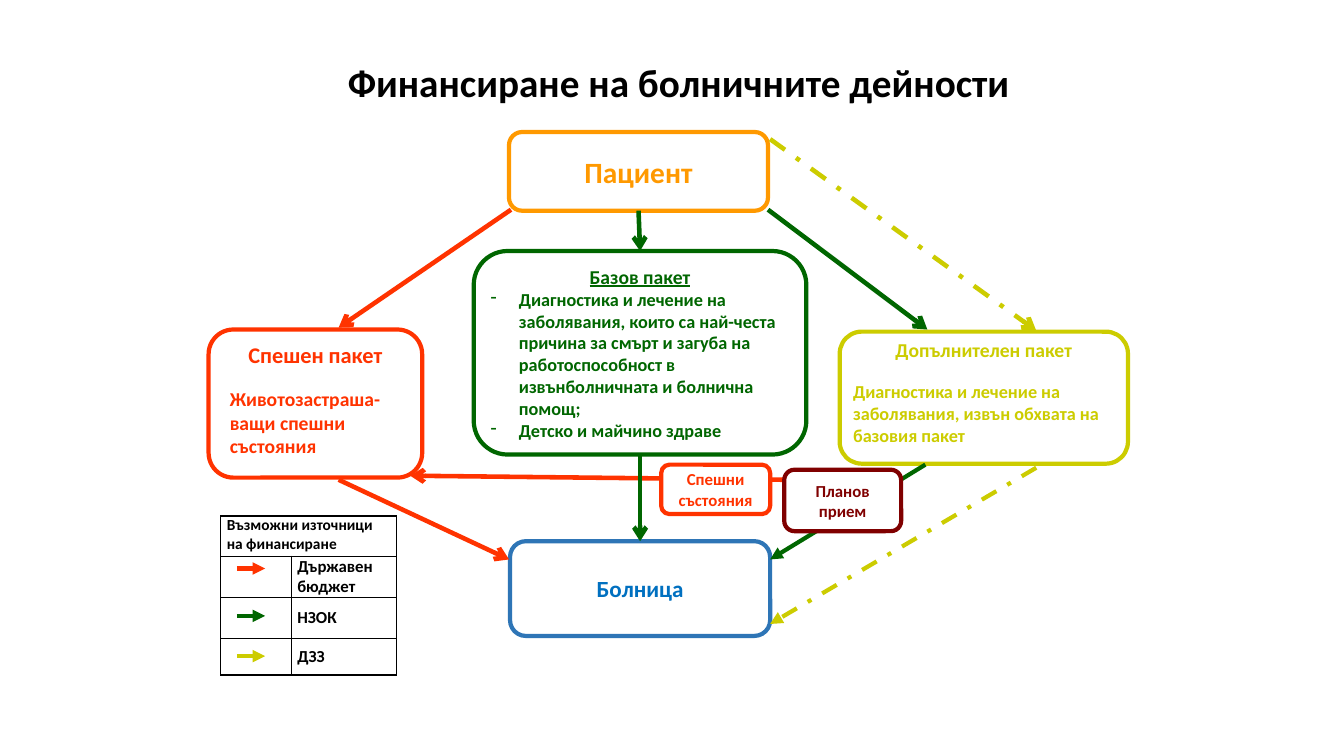
from lxml.etree import SubElement
from pptx import Presentation
from pptx.dml.color import RGBColor
from pptx.enum.dml import MSO_LINE
from pptx.enum.shapes import MSO_CONNECTOR, MSO_SHAPE
from pptx.enum.text import MSO_ANCHOR as ANCHOR, PP_ALIGN as ALIGN
from pptx.oxml.ns import qn
from pptx.util import Pt

COLORS = {"red": "FF3300", "green": "006600", "lime": "CCCC00", "orange": "FF9900",
          "blue": "0070C0", "border_blue": "2E75B6", "maroon": "800000",
          "black": "000000", "white": "FFFFFF"}
RGB = {name: RGBColor.from_string(value) for name, value in COLORS.items()}


def add_text(p, text, size, color, underline=None):
    r = p.add_run()
    r.text = text
    r.font.name = "Calibri"
    r.font.size = Pt(size)
    r.font.bold = True
    r.font.underline = underline
    r.font.color.rgb = RGB[color]


def add_arrow(x1, y1, x2, y2, color, width, head, dashed=False):
    c = s.shapes.add_connector(MSO_CONNECTOR.STRAIGHT, Pt(x1), Pt(y1), Pt(x2), Pt(y2))
    c.line.color.rgb = RGB[color]
    c.line.width = Pt(width)
    if dashed:
        c.line.dash_style = MSO_LINE.DASH_DOT
    spPr = c._element.spPr
    SubElement(spPr.find(qn("a:ln")), qn("a:tailEnd"), type=head)
    SubElement(spPr, qn("a:effectLst"))
    return c


prs = Presentation()
prs.slide_width, prs.slide_height = Pt(960), Pt(540)
s = prs.slides.add_slide(prs.slide_layouts[5])

title = s.shapes.title
title.left, title.top, title.width, title.height = Pt(162.7), Pt(31), Pt(643.7), Pt(54.7)
tf = title.text_frame
tf.vertical_anchor = ANCHOR.MIDDLE
tf.paragraphs[0].alignment = ALIGN.CENTER
add_text(tf.paragraphs[0], "Финансиране на болничните дейности", 28, "black")

main_boxes = [
    ("base", 338.4, 179.3, 237.6, 145.4, "green", "green", "Базов пакет", 14),
    ("hospital", 364.3, 386.6, 185.8, 67.7, "border_blue", "blue", "Болница", 16.5),
    ("patient", 363.6, 94.3, 185, 56.2, "orange", "orange", "Пациент", 21),
    ("urgent", 149, 235.4, 152.6, 105.8, "red", "red", "Спешен пакет", 16),
    ("extra", 599.8, 236.9, 205.9, 94.3, "lime", "lime", "Допълнителен пакет", 14),
]
labels = [
    ("planned", 560.2, 335.5, 83.5, 43.9, "maroon", "maroon", "Планов прием", 12),
    ("emergencies", 472.3, 331.9, 77.8, 35.3, "red", "red", "Спешни състояния", 12),
]
arrows = [
    (365, 149.8, 241.9, 234, "red", 3.25, "arrow", False),
    (550.1, 99.4, 740.2, 236.2, "lime", 3.25, "arrow", True),
    (548.6, 149.8, 662.4, 235.4, "green", 3.25, "arrow", False),
    (740.2, 334.1, 550.1, 445.7, "lime", 3, "triangle", True),
    (661, 331.9, 550.1, 399.6, "green", 3, "triangle", False),
    (559.4, 342.7, 293, 339.8, "red", 3.25, "arrow", False),
    (241.9, 342.7, 363.6, 399.6, "red", 3.25, "arrow", False),
]

boxes = {}
for group, lines in ((main_boxes, arrows), (labels, [])):
    for name, x, y, w, h, border, color, heading, size in group:
        sp = s.shapes.add_shape(MSO_SHAPE.ROUNDED_RECTANGLE, Pt(x), Pt(y), Pt(w), Pt(h))
        sp.shadow.inherit = False
        sp.fill.solid()
        sp.fill.fore_color.rgb = RGB["white"]
        sp.line.color.rgb = RGB[border]
        sp.line.width = Pt(3)
        tf = sp.text_frame
        tf.word_wrap = True
        tf.vertical_anchor = ANCHOR.MIDDLE
        tf.margin_left = tf.margin_right = Pt(5)
        tf.margin_top = tf.margin_bottom = Pt(2.9)
        tf.paragraphs[0].alignment = ALIGN.CENTER
        add_text(tf.paragraphs[0], heading, size, color, name == "base" or None)
        boxes[name] = sp
    for line in lines:
        add_arrow(*line)

for item in [
    "Диагностика и лечение на заболявания, които са най-честа причина за смърт и загуба на "
    "работоспособност в извънболничната и болнична помощ;",
    "Детско и майчино здраве",
]:
    p = boxes["base"].text_frame.add_paragraph()
    p.alignment = ALIGN.LEFT
    pPr = p._p.get_or_add_pPr()
    pPr.set("marL", str(Pt(20.2)))
    pPr.set("indent", str(Pt(-20.2)))
    SubElement(pPr, qn("a:buChar"), char="-")
    add_text(p, item, 13, "green")

for name, text, size, color, indent, top, gap in [
    ("urgent", "Животозастраша-ващи спешни състояния", 14, "red", 5, 2.9, 14),
    ("extra", "Диагностика и лечение на заболявания, извън обхвата на базовия пакет",
     13, "lime", 0, 0, 13.5),
]:
    tf = boxes[name].text_frame
    tf.vertical_anchor = ANCHOR.TOP
    tf.margin_top = Pt(top)
    tf.paragraphs[0].space_after = Pt(gap)
    p = tf.add_paragraph()
    p.alignment = ALIGN.LEFT
    p._p.get_or_add_pPr().set("marL", str(Pt(indent)))
    add_text(p, text, size, color)

for start, end in (("patient", "base"), ("base", "hospital")):
    c = add_arrow(0, 0, 10, 10, "green", 3.25, "arrow")
    c.begin_connect(boxes[start], 2)
    c.end_connect(boxes[end], 0)

frame = s.shapes.add_table(4, 2, Pt(157.7), Pt(368.6), Pt(125.3), Pt(113.8))
table = frame.table
table.first_row = table.horz_banding = False
for col, width in zip(table.columns, (50.4, 74.9)):
    col.width = Pt(width)
for row, height in zip(table.rows, (28.8, 28.8, 29.5, 26)):
    row.height = Pt(height)
for cell in table.iter_cells():
    cell.margin_left = cell.margin_right = Pt(4.3)
    cell.margin_top = cell.margin_bottom = Pt(0)
    cell.vertical_anchor = ANCHOR.MIDDLE
    tcPr = cell._tc.get_or_add_tcPr()
    for side in ("lnL", "lnR", "lnT", "lnB"):
        ln = SubElement(tcPr, qn(f"a:{side}"), w=str(Pt(1)))
        SubElement(SubElement(ln, qn("a:solidFill")), qn("a:srgbClr"), val=COLORS["black"])
    cell.fill.solid()
    cell.fill.fore_color.rgb = RGB["white"]
header = table.cell(0, 0)
header.merge(table.cell(0, 1))
header.vertical_anchor = ANCHOR.TOP
add_text(header.text_frame.paragraphs[0], "Възможни източници на финансиране", 11, "black")

for i, (source, y, color) in enumerate([
    ("Държавен бюджет", 406.1, "red"), ("НЗОК", 439.9, "green"), ("ДЗЗ", 468.7, "lime"),
], 1):
    add_text(table.cell(i, 1).text_frame.paragraphs[0], source, 12, "black")
    add_arrow(169.2, y, 189.4, y, color, 3, "triangle", color == "lime")

prs.save("out.pptx")
